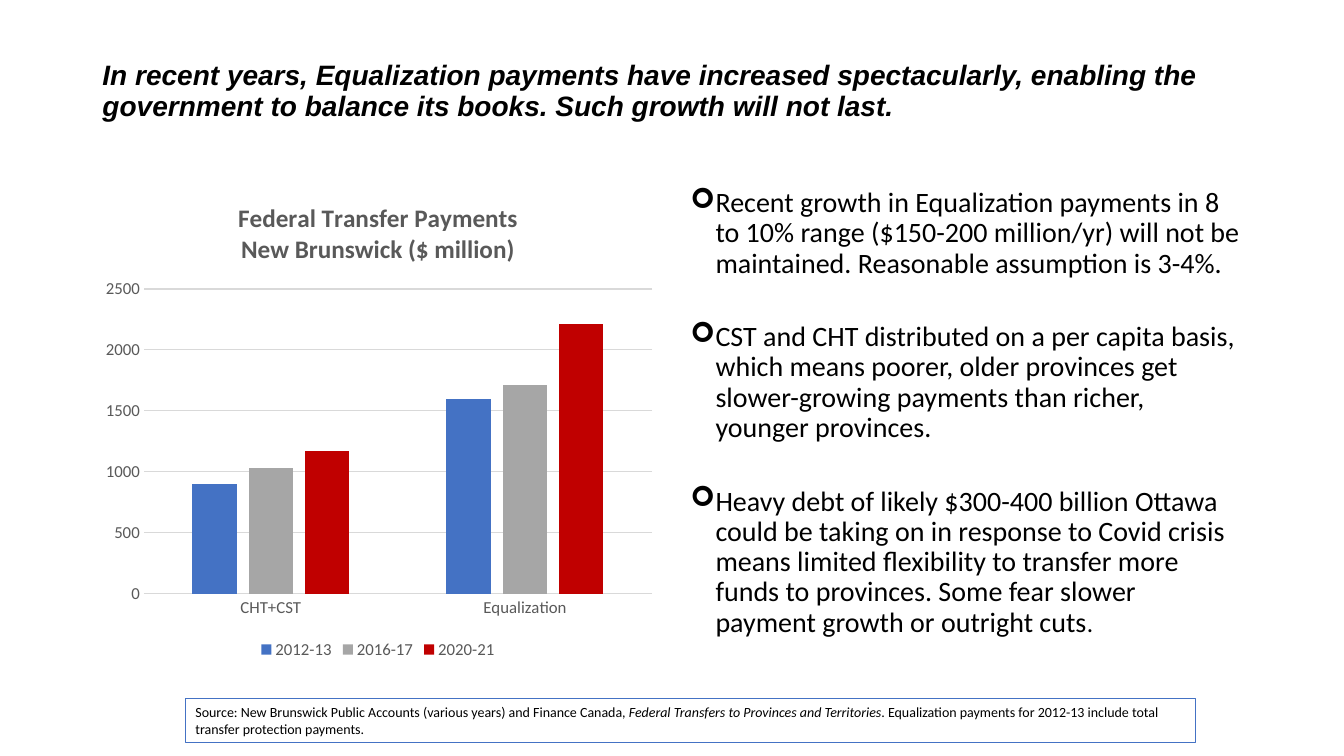
"""Build a slide on federal transfer payments to New Brunswick."""
from lxml import etree
from pptx import Presentation
from pptx.chart.data import CategoryChartData
from pptx.dml.color import RGBColor
from pptx.enum.chart import XL_CHART_TYPE, XL_LEGEND_POSITION, XL_TICK_MARK
from pptx.enum.shapes import MSO_SHAPE
from pptx.enum.text import MSO_ANCHOR, MSO_AUTO_SIZE, PP_ALIGN
from pptx.oxml import parse_xml
from pptx.oxml.ns import nsdecls, qn
from pptx.util import Pt

COLUMNS = XL_CHART_TYPE.COLUMN_CLUSTERED
BOTTOM = XL_LEGEND_POSITION.BOTTOM
NO_TICK = XL_TICK_MARK.NONE
LEFT, CENTER = PP_ALIGN.LEFT, PP_ALIGN.CENTER
TOP, MIDDLE = MSO_ANCHOR.TOP, MSO_ANCHOR.MIDDLE

TITLE = [[("In recent years, Equalization payments have increased spectacularly, enabling "
           "the government to balance its books. Such growth will not last.", {})]]
POINTS = [
    [("Recent growth in Equalization payments in 8 to 10% range ($150-200 million/yr) "
      "will not be maintained. Reasonable assumption is 3-4%.", {})],
    [("CST and CHT distributed on a per capita basis, which means poorer, older provinces "
      "get slower-growing payments than richer, younger provinces.", {})],
    [("Heavy debt of likely $300-400 billion Ottawa could be taking on in response to "
      "Covid crisis means limited flexibility to transfer more funds to provinces. "
      "Some fear slower payment growth or outright cuts", {}), (".", {"size": 18})],
]
SOURCE = [[
    ("Source: New Brunswick Public Accounts (various years) and Finance Canada, ", {}),
    ("Federal Transfers to Provinces and Territories", {"italic": True}),
    (". Equalization payments for 2012-13 include total transfer protection payments.", {}),
]]
CHART_TITLE = [[("Federal Transfer Payments", {})], [("New Brunswick ($ million)", {})]]
CATEGORIES = ["CHT+CST", "Equalization"]
SERIES = [
    ("2012-13", (900, 1600), "4472C4"),
    ("2016-17", (1030, 1710), "A6A6A6"),
    ("2020-21", (1170, 2210), "C00000"),
]

THEME = {
    "ink": "000000", "grey": "595959", "grid": "D9D9D9", "paper": "FFFFFF", "blue": "4472C4",
    "heading": "Arial", "body": "Calibri",
    "large": 20, "chart_title": 18, "label": 12, "small": 10,
}
SLIDE = (960, 540)
TITLE_BOX = (66, 29, 828, 73.5)
CHART_BOX = (66, 131, 408, 343)
POINTS_BOX = (486, 131, 408, 356)
SOURCE_BOX = (132.5, 499, 721.5, 31.5)
PLOT = {"x": 0.09, "y": 0.22, "w": 0.89, "h": 0.635}


def color(name):
    return RGBColor.from_string(THEME.get(name, name))


def lengths(box):
    return [Pt(v) for v in box]


def style(font, size, ink="ink", face="body", bold=False, italic=False):
    font.size, font.name = Pt(size), THEME[face]
    font.bold, font.italic = bold, italic
    font.color.rgb = color(ink)


def write(tf, paragraphs, align=LEFT, spacing=None, gap=0, bullet=None, **font):
    for i, runs in enumerate(paragraphs):
        p = tf.add_paragraph() if i else tf.paragraphs[0]
        p.alignment, p.line_spacing = align, spacing
        p.space_before = Pt(gap if i else 0)
        if bullet:
            pPr = p._p.get_or_add_pPr()
            pPr.set("marL", str(Pt(18)))
            pPr.set("indent", str(Pt(-18)))
            etree.SubElement(pPr, qn("a:buFont")).set("typeface", "Wingdings")
            etree.SubElement(pPr, qn("a:buChar")).set("char", bullet)
        for text, changes in runs:
            r = p.add_run()
            r.text = text
            style(r.font, **{**font, **changes})


def set_frame(tf, anchor):
    tf.word_wrap, tf.auto_size = True, MSO_AUTO_SIZE.NONE
    tf.vertical_anchor = anchor
    return tf


def add_title(slide):
    sp = slide.shapes.title
    sp.left, sp.top, sp.width, sp.height = lengths(TITLE_BOX)
    write(set_frame(sp.text_frame, MIDDLE), TITLE, spacing=0.9, size=THEME["large"],
          face="heading", bold=True, italic=True)


def add_points(slide):
    sp = slide.shapes.add_textbox(*lengths(POINTS_BOX))
    write(set_frame(sp.text_frame, TOP), POINTS, spacing=0.9, gap=31, bullet="➢",
          size=THEME["large"])


def add_source(slide):
    sp = slide.shapes.add_shape(MSO_SHAPE.RECTANGLE, *lengths(SOURCE_BOX))
    sp.shadow.inherit = False
    sp.fill.solid()
    sp.fill.fore_color.rgb = color("paper")
    sp.line.color.rgb = color("blue")
    sp.line.width = Pt(1)
    write(set_frame(sp.text_frame, TOP), SOURCE, size=THEME["small"])


def format_line(line):
    line.color.rgb = color("grid")
    line.width = Pt(0.75)


def place_plot(chart):
    parts = "".join(f'<c:{k} val="{v}"/>' for k, v in PLOT.items())
    layout = parse_xml(
        f'<c:layout {nsdecls("c")}><c:manualLayout><c:layoutTarget val="inner"/>'
        f'<c:xMode val="edge"/><c:yMode val="edge"/>{parts}</c:manualLayout></c:layout>')
    area = chart._chartSpace.chart.plotArea
    for old in area.findall(qn("c:layout")):
        area.remove(old)
    area.insert(0, layout)


def add_transfers_chart(slide):
    data = CategoryChartData()
    data.categories = CATEGORIES
    for name, values, _ in SERIES:
        data.add_series(name, values)
    chart = slide.shapes.add_chart(COLUMNS, *lengths(CHART_BOX), data).chart
    style(chart.font, THEME["small"])
    chart.has_title = True
    write(chart.chart_title.text_frame, CHART_TITLE, align=CENTER,
          size=THEME["chart_title"], ink="grey", bold=True)
    chart.chart_title.include_in_layout = False
    chart.has_legend = True
    chart.legend.position = BOTTOM
    chart.legend.include_in_layout = False
    style(chart.legend.font, THEME["label"], "grey")

    for axis in (chart.category_axis, chart.value_axis):
        axis.major_tick_mark = axis.minor_tick_mark = NO_TICK
        style(axis.tick_labels.font, THEME["label"], "grey")
    format_line(chart.category_axis.format.line)
    values = chart.value_axis
    values.format.line.fill.background()
    format_line(values.major_gridlines.format.line)
    values.minimum_scale, values.maximum_scale, values.major_unit = 0, 2500, 500
    values.tick_labels.number_format = "0"
    values.tick_labels.number_format_is_linked = False

    plot = chart.plots[0]
    plot.gap_width, plot.overlap, plot.vary_by_categories = 219, -27, False
    for series, (_, _, fill) in zip(plot.series, SERIES):
        series.format.fill.solid()
        series.format.fill.fore_color.rgb = color(fill)
    place_plot(chart)


def main():
    prs = Presentation()
    prs.slide_width, prs.slide_height = lengths(SLIDE)
    slide = prs.slides.add_slide(prs.slide_layouts[5])
    add_title(slide)
    add_points(slide)
    add_transfers_chart(slide)
    add_source(slide)
    prs.save("out.pptx")


if __name__ == "__main__":
    main()
